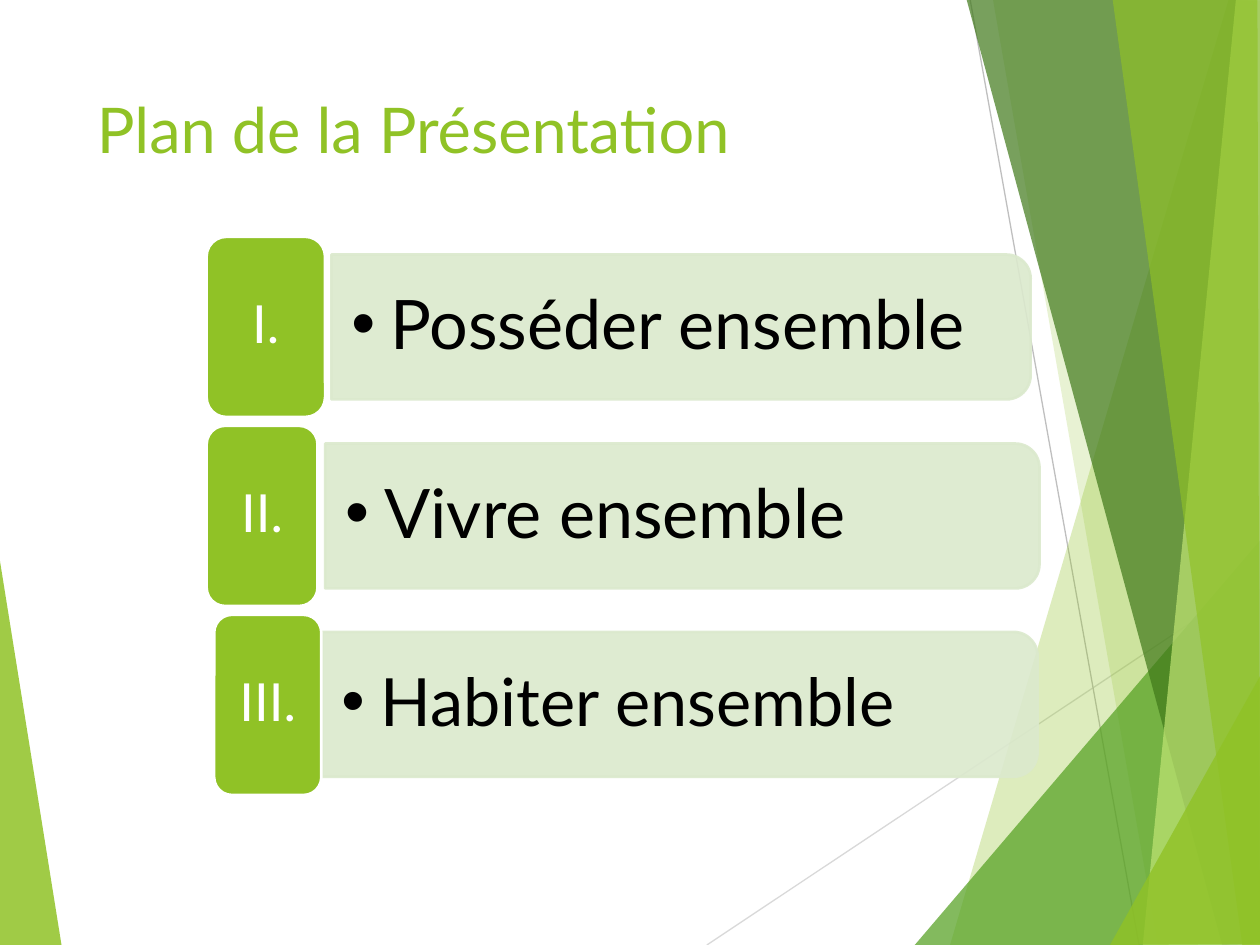
from dataclasses import dataclass

from lxml.etree import SubElement
from pptx import Presentation
from pptx.dml.color import RGBColor
from pptx.enum.shapes import MSO_CONNECTOR as Connector, MSO_SHAPE as Preset
from pptx.enum.text import MSO_ANCHOR as Anchor, PP_ALIGN as Align
from pptx.oxml.ns import qn
from pptx.util import Emu, Pt

PX = 9144
FONT = "Lato"
BULLET_FONT = "Arial"
GREEN = RGBColor(0x90, 0xC2, 0x26)
LEAF = RGBColor(0x54, 0xA0, 0x21)
FOREST = RGBColor(0x3F, 0x78, 0x19)
LIME = RGBColor(0xC0, 0xE4, 0x74)
PALE = RGBColor(0xDB, 0xE9, 0xCD)
SILVER = RGBColor(0xD9, 0xD9, 0xD9)
GREY = RGBColor(0xBF, 0xBF, 0xBF)
WHITE = RGBColor(0xFF, 0xFF, 0xFF)
BLACK = RGBColor(0x00, 0x00, 0x00)

ROW_TOP, ROW_PITCH = 188, 150
TILE_HEIGHT, TILE_MARGIN = 143, 4
PANEL_OFFSET, PANEL_HEIGHT = 14, 115
LABEL_OFFSET, LABEL_HEIGHT = 20, 103


@dataclass
class Facet:
    points: list[tuple[int, int]]
    color: RGBColor
    opacity: int


@dataclass
class Ray:
    start: tuple[int, int]
    end: tuple[int, int]
    color: RGBColor


@dataclass
class Box:
    left: int
    top: int
    width: int
    height: int

    def emu(self) -> list[Emu]:
        return [Emu(value * PX) for value in (self.left, self.top, self.width, self.height)]


@dataclass
class Chapter:
    numeral: str
    title: str
    size: int
    tile_left: int
    tile_width: int
    panel_left: int
    panel_width: int


RAYS = [
    Ray((561, 750), (1001, 457), SILVER),
    Ray((770, 0), (904, 750), GREY),
]
FACETS = [
    Facet([(-1, 439), (49, 751), (-1, 750)], GREEN, 85),
    Facet([(975, 0), (754, 750), (1002, 751), (1001, 1)], GREEN, 30),
    Facet([(788, -1), (919, 750), (1001, 750), (1001, -1)], GREEN, 20),
    Facet([(726, 750), (1000, 429), (1001, 750)], LEAF, 72),
    Facet([(767, -1), (970, 750), (1001, 749), (1001, -1)], FOREST, 70),
    Facet([(981, -1), (907, 750), (1001, 750), (1000, -1)], LIME, 70),
    Facet([(883, -1), (986, 750), (1000, 750), (998, -1)], GREEN, 65),
    Facet([(881, 750), (1001, 535), (1001, 749)], GREEN, 80),
]
CHAPTERS = [
    Chapter("I.", "Posséder ensemble", 39, 164, 94, 263, 555),
    Chapter("II.", "Vivre ensemble", 39, 164, 88, 258, 567),
    Chapter("III.", "Habiter ensemble", 38, 170, 85, 255, 568),
]


def set_opacity(fill, color: RGBColor, opacity: int) -> None:
    fill.solid()
    fill.fore_color.rgb = color
    if opacity < 100:
        for node in fill._xPr.iter(qn("a:srgbClr")):
            if node.find(qn("a:alpha")) is None:
                SubElement(node, qn("a:alpha"), val=str(opacity * 1000))


def draw_ray(slide, ray: Ray) -> None:
    ends = [Emu(value * PX) for value in ray.start + ray.end]
    line = slide.shapes.add_connector(Connector.STRAIGHT, *ends)
    line.line.color.rgb = ray.color
    line.line.width = Pt(0.75)
    SubElement(line._element.spPr, qn("a:effectLst"))


def draw_facet(slide, facet: Facet) -> None:
    builder = slide.shapes.build_freeform(*facet.points[0], scale=PX)
    builder.add_line_segments(facet.points[1:], close=True)
    shape = builder.convert_to_shape()
    shape.shadow.inherit = False
    shape.line.fill.background()
    set_opacity(shape.fill, facet.color, facet.opacity)


def draw_card(slide, preset: Preset, box: Box, fill: RGBColor, outline: RGBColor,
              opacity: int = 100, rotation: int = 0) -> None:
    shape = slide.shapes.add_shape(preset, *box.emu())
    shape.shadow.inherit = False
    shape.rotation = rotation
    shape.line.width = Pt(1.5)
    set_opacity(shape.fill, fill, opacity)
    set_opacity(shape.line.fill, outline, opacity)


def draw_text(slide, text: str, box: Box, size: int, color: RGBColor,
              frame_format: dict, paragraph_format: dict):
    frame = slide.shapes.add_textbox(*box.emu()).text_frame
    paragraph = frame.paragraphs[0]
    run = paragraph.add_run()
    run.text = text
    run.font.color.rgb = color
    formats = [
        (frame, {"word_wrap": True, **frame_format}),
        (paragraph, paragraph_format),
        (run.font, {"name": FONT, "size": Pt(size)}),
    ]
    for target, values in formats:
        for name, value in values.items():
            setattr(target, name, value)
    return paragraph


def middle_frame(side: int, edge: int) -> dict:
    return {
        "vertical_anchor": Anchor.MIDDLE,
        "margin_left": Emu(side * PX),
        "margin_right": Emu(side * PX),
        "margin_top": Emu(edge * PX),
        "margin_bottom": Emu(edge * PX),
    }


def add_bullet(paragraph, indent: int) -> None:
    properties = paragraph._p.get_or_add_pPr()
    properties.set("marL", str(indent * PX))
    properties.set("indent", str(-indent * PX))
    SubElement(properties, qn("a:buFont"), typeface=BULLET_FONT)
    SubElement(properties, qn("a:buChar"), char="•")


def draw_chapter(slide, chapter: Chapter, top: int) -> None:
    center_x = chapter.panel_left + chapter.panel_width // 2
    center_y = top + PANEL_OFFSET + PANEL_HEIGHT // 2
    panel = Box(center_x - PANEL_HEIGHT // 2, center_y - chapter.panel_width // 2,
                PANEL_HEIGHT, chapter.panel_width)
    draw_card(slide, Preset.ROUND_2_SAME_RECTANGLE, panel, PALE, PALE, 90, 90)
    label = Box(chapter.panel_left, top + LABEL_OFFSET, chapter.panel_width - 5, LABEL_HEIGHT)
    paragraph = draw_text(slide, chapter.title, label, chapter.size, BLACK,
                          middle_frame(16, 8), {"line_spacing": 0.9, "level": 1})
    add_bullet(paragraph, 31)

    tile = Box(chapter.tile_left, top, chapter.tile_width, TILE_HEIGHT)
    draw_card(slide, Preset.ROUNDED_RECTANGLE, tile, GREEN, WHITE)
    numeral = Box(tile.left + TILE_MARGIN, top + TILE_MARGIN,
                  tile.width - 2 * TILE_MARGIN, TILE_HEIGHT - 2 * TILE_MARGIN)
    draw_text(slide, chapter.numeral, numeral, 30, WHITE, middle_frame(12, 6),
              {"line_spacing": 0.9, "alignment": Align.CENTER})


def main() -> None:
    presentation = Presentation()
    presentation.slide_width, presentation.slide_height = Emu(1000 * PX), Emu(750 * PX)
    slide = presentation.slides.add_slide(presentation.slide_layouts[6])
    for ray in RAYS:
        draw_ray(slide, ray)
    for facet in FACETS:
        draw_facet(slide, facet)
    draw_text(slide, "Plan de la Présentation", Box(67, 67, 694, 144), 36, GREEN, {}, {})
    for index, chapter in enumerate(CHAPTERS):
        draw_chapter(slide, chapter, ROW_TOP + index * ROW_PITCH)
    presentation.save("out.pptx")


if __name__ == "__main__":
    main()
